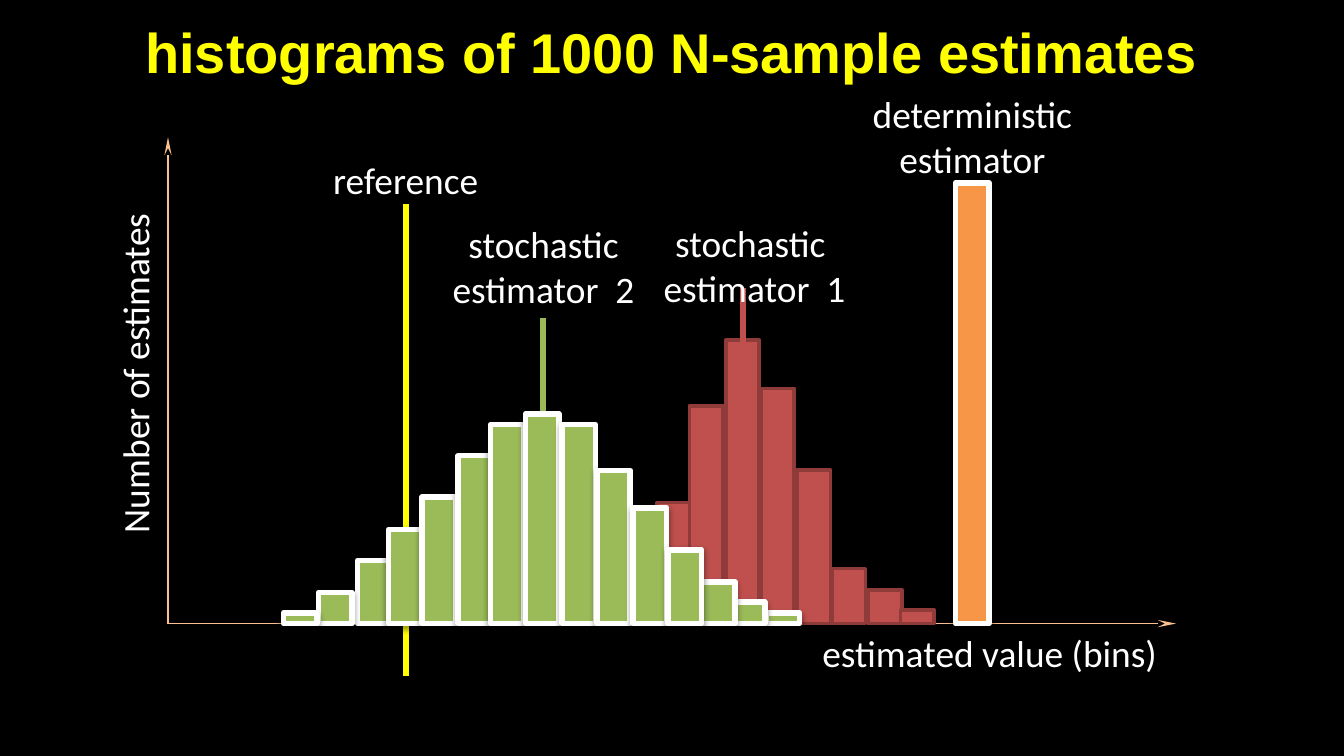
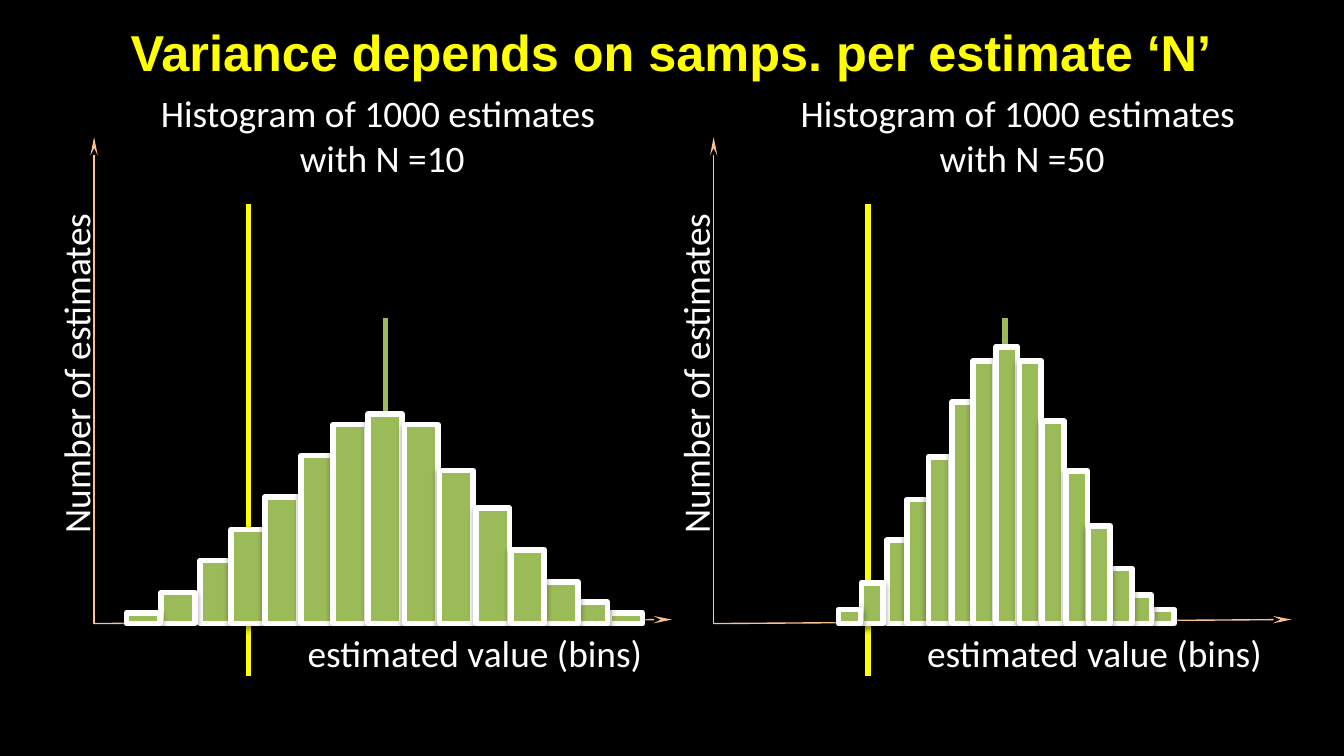
from pptx import Presentation
from pptx.dml.color import RGBColor
from pptx.enum.shapes import MSO_CONNECTOR, MSO_SHAPE
from pptx.enum.text import MSO_ANCHOR, MSO_AUTO_SIZE, PP_ALIGN
from pptx.oxml.ns import qn
from pptx.util import Inches, Pt
from lxml.etree import SubElement

COLORS = {
    "background": "000000",
    "title": "FFFF00",
    "text": "FFFFFF",
    "axis": "FAC090",
    "reference": "FFFF00",
    "green": "9BBB59",
    "red": "C0504D",
    "red_edge": "8E3B39",
    "orange": "F79646",
    "white_edge": "FFFFFF",
}
BASELINE = 4.64
BAR_WIDTH = 0.25

# Bars as (left edge relative to the peak bar, height), from back to front
GREEN_BARS = [
    (-1.25, 0.47), (-1.54, 0.23), (-1.8, 0.08), (1.79, 0.08), (1.53, 0.16),
    (-1.02, 0.7), (-0.77, 0.94), (-0.5, 1.25), (-0.26, 1.48), (0, 1.56),
    (0.27, 1.48), (0.53, 1.14), (0.8, 0.86), (1.31, 0.31), (1.06, 0.55),
]
RED_BARS = [
    (-0.77, 0.29), (-0.51, 0.9), (-0.27, 1.62), (0, 2.11), (0.26, 1.75),
    (0.53, 1.14), (0.79, 0.41), (1.06, 0.25), (1.3, 0.1), (-1.03, 0.1),
]


def rgb(name):
    return RGBColor.from_string(COLORS[name])


def add_page(deck, title, size):
    page = deck.slides.add_slide(deck.slide_layouts[6])
    page.background.fill.solid()
    page.background.fill.fore_color.rgb = rgb("background")
    box = page.shapes.add_textbox(Inches(0.78), Inches(0.04), Inches(8.43), Inches(0.68))
    frame = box.text_frame
    frame.word_wrap = True
    frame.vertical_anchor = MSO_ANCHOR.MIDDLE
    frame.margin_left = frame.margin_right = Inches(0.09)
    frame.margin_top = frame.margin_bottom = Inches(0.04)
    add_span(frame.paragraphs[0], title, "Arial", size, "title", PP_ALIGN.CENTER, True)
    return page


def add_span(para, text, font, size, color, align, bold=False):
    para.alignment = align
    span = para.add_run()
    span.text = text
    span.font.name = font
    span.font.size = Pt(size)
    span.font.bold = bold
    span.font.color.rgb = rgb(color)


def add_label(page, lines, left, top, width, rotation=0):
    """Place one or two lines of label text; pairs of lines are centred."""
    height = 0.44 if len(lines) == 1 else 0.77
    box = page.shapes.add_textbox(Inches(left), Inches(top), Inches(width), Inches(height))
    box.rotation = rotation
    frame = box.text_frame
    frame.word_wrap = False
    frame.auto_size = MSO_AUTO_SIZE.SHAPE_TO_FIT_TEXT
    align = PP_ALIGN.LEFT if len(lines) == 1 else PP_ALIGN.CENTER
    for index, text in enumerate(lines):
        para = frame.add_paragraph() if index else frame.paragraphs[0]
        add_span(para, text, "Calibri", 20, "text", align)


def add_line(page, start, end, color, weight=3, arrow=False):
    line = page.shapes.add_connector(
        MSO_CONNECTOR.STRAIGHT, *(Inches(value) for value in (*start, *end)))
    line.line.color.rgb = rgb(color)
    line.line.width = Pt(weight)
    properties = line._element.spPr
    if arrow:
        SubElement(properties.find(qn("a:ln")), qn("a:tailEnd"),
                   type="stealth", w="sm", len="lg")
    SubElement(properties, qn("a:effectLst"))


def add_axes(page, left, tip, value_label, count_label):
    add_line(page, (left, BASELINE), (left, 1.02), "axis", 0.75, arrow=True)
    add_line(page, (left, BASELINE), tip, "axis", 0.75, arrow=True)
    add_label(page, ["estimated value (bins)"], value_label, 4.64, 2.72)
    add_label(page, ["Number of estimates"], count_label, 2.54, 2.61, rotation=270)


def add_reference(page, left):
    add_line(page, (left, 1.52), (left, 5.03), "reference")


def add_shadow(bar):
    effects = bar._element.spPr.find(qn("a:effectLst"))
    shadow = SubElement(effects, qn("a:outerShdw"), blurRad="40000", dist="20000",
                        dir="5400000", rotWithShape="0")
    color = SubElement(shadow, qn("a:srgbClr"), val="000000")
    SubElement(color, qn("a:alpha"), val="38000")


def add_bar(shapes, left, height, width, fill, edge="white_edge", weight=3, shadow=True):
    bar = shapes.add_shape(MSO_SHAPE.RECTANGLE, Inches(left), Inches(BASELINE - height),
                           Inches(width), Inches(height))
    bar.shadow.inherit = False
    bar.fill.solid()
    bar.fill.fore_color.rgb = rgb(fill)
    bar.line.color.rgb = rgb(edge)
    bar.line.width = Pt(weight)
    if shadow:
        add_shadow(bar)


def add_histogram(page, bars, peak, fill, x_scale=1, y_scale=1, **style):
    group = page.shapes.add_group_shape()
    for offset, height in bars:
        add_bar(group.shapes, peak + offset * x_scale, height * y_scale,
                BAR_WIDTH * x_scale, fill, **style)


def build_estimators(deck):
    page = add_page(deck, "histograms of 1000 N-sample estimates", 30)
    add_axes(page, 1.25, (8.75, BASELINE), 6.02, -0.3)
    add_histogram(page, RED_BARS, 5.4, "red", edge="red_edge", weight=2, shadow=False)

    # Reference and mean lines with their labels
    add_reference(page, 3.02)
    add_line(page, (5.53, 2.14), (5.53, BASELINE), "red")
    add_line(page, (4.04, 2.37), (4.04, BASELINE), "green")
    add_label(page, ["reference"], 2.38, 1.12, 1.29)
    add_label(page, ["stochastic", "estimator  2"], 3.26, 1.6, 1.57)
    add_label(page, ["stochastic ", "estimator  1"], 4.83, 1.59, 1.57)

    # Front histogram and the single deterministic bar
    add_histogram(page, GREEN_BARS, 3.91, "green")
    add_bar(page.shapes, 7.11, 3.28, BAR_WIDTH, "orange")
    add_label(page, ["deterministic", "estimator"], 6.38, 0.63, 1.71)


def build_variance(deck):
    page = add_page(deck, "Variance depends on samps. per estimate ‘N’", 27)
    # Panel shift, samples, heading left, peak bar left, bar scales
    panels = [
        (0, 10, 1.08, 2.74, 1, 1),
        (4.61, 50, 5.84, 7.41, 0.65, 1.32),
    ]
    for shift, samples, heading, peak, x_scale, y_scale in panels:
        add_axes(page, shift + 0.7, (shift + 5, 4.61), shift + 2.19, shift - 0.74)
        add_reference(page, shift + 1.85)
        add_line(page, (shift + 2.87, 2.37), (shift + 2.87, BASELINE), "green")
        add_histogram(page, GREEN_BARS, peak, "green", x_scale, y_scale)
        add_label(page, ["Histogram of 1000 estimates ", f"with N ={samples}"],
                  heading, 0.62, 3.53)


def main():
    deck = Presentation()
    # Widescreen, 16:9
    deck.slide_width = Inches(10)
    deck.slide_height = Inches(10) * 9 // 16
    build_estimators(deck)
    build_variance(deck)
    deck.save("out.pptx")


if __name__ == "__main__":
    main()
